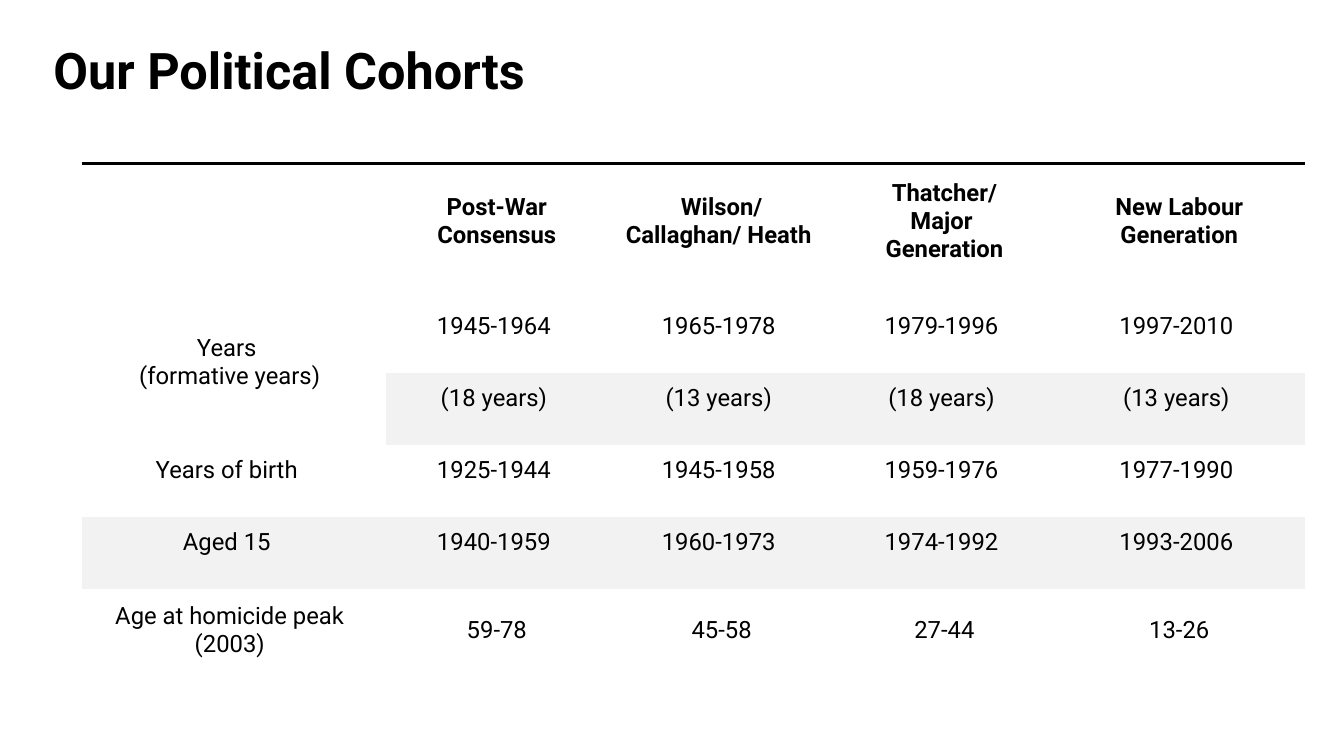
from lxml import etree
from pptx import Presentation
from pptx.dml.color import RGBColor
from pptx.enum import text
from pptx.oxml import ns
from pptx.util import Pt

BLACK = RGBColor(0x00, 0x00, 0x00)
BAND = RGBColor(0xF2, 0xF2, 0xF2)
FONT = "Roboto"
NO_STYLE = "{2D5ABB26-0587-4C30-8999-92F81FD0307C}"

COLUMN_WIDTHS = [217.4, 164.2, 157, 161.3, 174.2]
ROW_HEIGHTS = [98.6, 51.4, 51.4, 51.4, 51.4, 74.9]
COHORTS = [
    ["", "Post-War Consensus", "Wilson/\nCallaghan/ Heath ", "Thatcher/\nMajor \nGeneration",
     "New Labour Generation"],
    ["Years \n(formative years)", "1945-1964 ", "1965-1978 ", "1979-1996 ", "1997-2010 "],
    ["", "(18 years) ", "(13 years) ", "(18 years) ", "(13 years) "],
    ["Years of birth ", "1925-1944 ", "1945-1958 ", "1959-1976 ", "1977-1990 "],
    ["Aged 15 ", "1940-1959 ", "1960-1973 ", "1974-1992 ", "1993-2006 "],
    ["Age at homicide peak (2003)", "59-78", "45-58", "27-44", "13-26"],
]
BANDED_ROWS = (2, 4)


def add_run(paragraph, words, size, bold):
    run = paragraph.add_run()
    run.text = words
    run.font.name = FONT
    run.font.size = Pt(size)
    run.font.bold = bold
    run.font.color.rgb = BLACK


def add_top_border(cell, width):
    line = etree.Element(ns.qn("a:lnT"), w=str(Pt(width)))
    fill = etree.SubElement(line, ns.qn("a:solidFill"))
    etree.SubElement(fill, ns.qn("a:srgbClr"), val=str(BLACK))
    cell._tc.get_or_add_tcPr().insert(0, line)


presentation = Presentation()
presentation.slide_width = Pt(960)
presentation.slide_height = Pt(540)
slide = presentation.slides.add_slide(presentation.slide_layouts[6])

title = slide.shapes.add_textbox(Pt(31), Pt(29.5), Pt(721.4), Pt(89.3))
title.text_frame.word_wrap = True
title_paragraph = title.text_frame.paragraphs[0]
title_paragraph.line_spacing = 0.9
add_run(title_paragraph, "Our Political Cohorts", 36, True)

frame = slide.shapes.add_table(len(ROW_HEIGHTS), len(COLUMN_WIDTHS), Pt(58.3), Pt(116.6),
                               Pt(sum(COLUMN_WIDTHS)), Pt(sum(ROW_HEIGHTS)))
table = frame.table
table.first_row = False
table.horz_banding = False
table._tbl.tblPr.find(ns.qn("a:tableStyleId")).text = NO_STYLE
for column, width in zip(table.columns, COLUMN_WIDTHS):
    column.width = Pt(width)
for row, height in zip(table.rows, ROW_HEIGHTS):
    row.height = Pt(height)
table.cell(1, 0).merge(table.cell(2, 0))

for row_index, entries in enumerate(COHORTS):
    for column_index, entry in enumerate(entries):
        cell = table.cell(row_index, column_index)
        cell.vertical_anchor = text.MSO_ANCHOR.MIDDLE
        cell.margin_left, cell.margin_top = Pt(0), Pt(2.2)
        cell.margin_right, cell.margin_bottom = Pt(5.8), Pt(18)
        if row_index in BANDED_ROWS and not cell.is_spanned:
            cell.fill.solid()
            cell.fill.fore_color.rgb = BAND
        else:
            cell.fill.background()
        if row_index == 0:
            add_top_border(cell, 2.25)
        if not entry:
            continue
        for line_index, words in enumerate(entry.split("\n")):
            text_frame = cell.text_frame
            paragraph = text_frame.add_paragraph() if line_index else text_frame.paragraphs[0]
            paragraph.alignment = text.PP_ALIGN.CENTER
            add_run(paragraph, words, 17, row_index == 0)

presentation.save("out.pptx")
